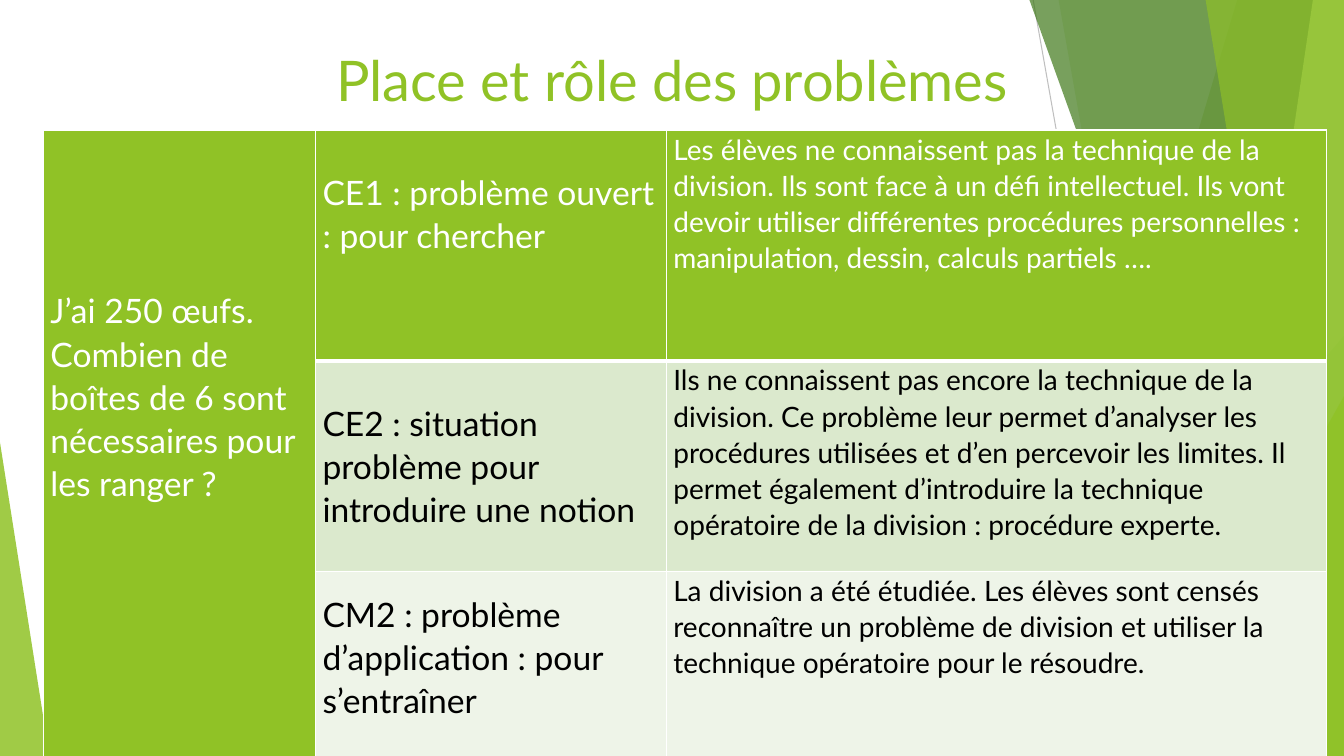
from dataclasses import dataclass

from lxml.etree import SubElement
from pptx import Presentation
from pptx.dml.color import RGBColor
from pptx.enum.shapes import MSO_CONNECTOR, MSO_SHAPE
from pptx.enum.text import MSO_ANCHOR, MSO_AUTO_SIZE, PP_ALIGN
from pptx.oxml.ns import qn
from pptx.shapes.autoshape import Shape
from pptx.slide import Slide
from pptx.table import _Cell as Cell
from pptx.util import Pt

FONT = "Lato"
WHITE = RGBColor(0xFF, 0xFF, 0xFF)
BLACK = RGBColor(0x00, 0x00, 0x00)
GREEN = RGBColor(0x90, 0xC2, 0x26)
MID_GREEN = RGBColor(0x54, 0xA0, 0x21)
DARK_GREEN = RGBColor(0x3F, 0x78, 0x19)
LIME = RGBColor(0xC0, 0xE4, 0x74)
PALE_GREEN = RGBColor(0xDB, 0xE9, 0xCD)
PALEST_GREEN = RGBColor(0xEE, 0xF4, 0xE8)
GREY = RGBColor(0xBF, 0xBF, 0xBF)
LIGHT_GREY = RGBColor(0xD9, 0xD9, 0xD9)

SLIDE_W, SLIDE_H = 960, 540
BAND_TOP = -0.6
LINE_SPACING = 1.07
BLANK_LINE = 14.1  # height of one 11 pt line at the table's line spacing


@dataclass(frozen=True)
class Ray:
    start: tuple[float, float]
    end: tuple[float, float]
    color: RGBColor


@dataclass(frozen=True)
class Band:
    """A facet that reaches from a slanted left edge to the right of the slide."""
    top_x: float
    bottom_x: float
    color: RGBColor
    opacity: int


@dataclass(frozen=True)
class Corner:
    """A right-angled triangle standing on the bottom of the slide."""
    left: float
    top: float
    width: float
    apex: float
    color: RGBColor
    opacity: int


@dataclass(frozen=True)
class Level:
    height: float
    purpose: str
    lines_above: int
    explanation: str
    fill: RGBColor
    color: RGBColor


DECOR = (
    Ray((738, 0), (833.8, 540), GREY),
    Ray((960, 290.2), (584.6, 540), LIGHT_GREY),
    Band(884.2, 722.9, GREEN, 30),
    Band(756, 851.8, GREEN, 20),
    Corner(703.4, 239.8, 256.6, 1, MID_GREEN, 72),
    Band(735.1, 929.5, DARK_GREEN, 70),
    Band(938.2, 858.2, LIME, 70),
    Band(861.1, 949, GREEN, 65),
    Corner(816.5, 283, 143.5, 1, GREEN, 80),
    Corner(0, 316.1, 35.3, 0, GREEN, 85),
)

PROBLEM = "J’ai 250 œufs. Combien de boîtes de 6 sont nécessaires pour les ranger ?"
COLUMN_WIDTHS = (194.4, 250.6, 471.6)
LEVELS = (
    Level(164.9, "CE1 : problème ouvert : pour chercher", 2,
          "Les élèves ne connaissent pas la technique de la division. Ils sont face à "
          "un défi intellectuel. Ils vont devoir utiliser différentes procédures "
          "personnelles : manipulation, dessin, calculs partiels ….",
          GREEN, WHITE),
    Level(150.5, "CE2 : situation problème pour introduire une notion", 2,
          "Ils ne connaissent pas encore la technique de la division. Ce problème leur "
          "permet d’analyser les procédures utilisées et d’en percevoir les limites. Il "
          "permet également d’introduire la technique opératoire de la division : "
          "procédure experte.",
          PALE_GREEN, BLACK),
    Level(132, "CM2 : problème d’application : pour s’entraîner", 1,
          "La division a été étudiée. Les élèves sont censés reconnaître un problème de "
          "division et utiliser la technique opératoire pour le résoudre.",
          PALEST_GREEN, BLACK),
)


def paint(facet: Shape, color: RGBColor, opacity: int) -> None:
    facet.shadow.inherit = False
    facet.line.fill.background()
    facet.fill.solid()
    facet.fill.fore_color.rgb = color
    tint = facet.element.spPr.find(f"{qn('a:solidFill')}/{qn('a:srgbClr')}")
    SubElement(tint, qn("a:alpha"), val=str(opacity * 1000))


def draw_ray(slide: Slide, ray: Ray) -> None:
    ends = [Pt(v) for v in (*ray.start, *ray.end)]
    line = slide.shapes.add_connector(MSO_CONNECTOR.STRAIGHT, *ends)
    line.line.color.rgb = ray.color
    line.line.width = Pt(0.75)
    SubElement(line.element.spPr, qn("a:effectLst"))


def draw_band(slide: Slide, band: Band) -> None:
    outline = slide.shapes.build_freeform(band.top_x, BAND_TOP, scale=Pt(1))
    outline.add_line_segments(
        [(SLIDE_W, BAND_TOP), (SLIDE_W, SLIDE_H), (band.bottom_x, SLIDE_H)])
    paint(outline.convert_to_shape(), band.color, band.opacity)


def draw_corner(slide: Slide, corner: Corner) -> None:
    triangle = slide.shapes.add_shape(
        MSO_SHAPE.ISOSCELES_TRIANGLE, Pt(corner.left), Pt(corner.top),
        Pt(corner.width), Pt(SLIDE_H - corner.top))
    triangle.adjustments[0] = corner.apex
    paint(triangle, corner.color, corner.opacity)


def draw_decor(slide: Slide) -> None:
    painters = {Ray: draw_ray, Band: draw_band, Corner: draw_corner}
    for part in DECOR:
        painters[type(part)](slide, part)


def style_cell(cell: Cell, fill: RGBColor, bottom_width: float) -> None:
    """Set margins, white borders and fill."""
    cell.margin_left = cell.margin_right = Pt(5)
    cell.margin_top = cell.margin_bottom = 0
    properties = cell._tc.get_or_add_tcPr()
    for side, width in (("L", 1), ("R", 1), ("T", 1), ("B", bottom_width)):
        border = SubElement(properties, qn(f"a:ln{side}"), w=str(Pt(width)))
        SubElement(SubElement(border, qn("a:solidFill")), qn("a:srgbClr"), val=str(WHITE))
    cell.fill.solid()
    cell.fill.fore_color.rgb = fill


def write_cell(cell: Cell, text: str, size: float, color: RGBColor,
               lines_above: int = 0) -> None:
    cell.margin_top = Pt(lines_above * BLANK_LINE)
    cell.text = text
    paragraph = cell.text_frame.paragraphs[0]
    paragraph.line_spacing = LINE_SPACING
    font = paragraph.font
    font.name, font.size, font.bold = FONT, Pt(size), False
    font.color.rgb = color


def draw_levels(slide: Slide) -> None:
    frame = slide.shapes.add_table(
        len(LEVELS), len(COLUMN_WIDTHS), Pt(31), Pt(92.9),
        Pt(sum(COLUMN_WIDTHS)), Pt(sum(level.height for level in LEVELS)))
    frame.element.addprevious(slide.shapes.title.element)
    table = frame.table
    for column, width in zip(table.columns, COLUMN_WIDTHS):
        column.width = Pt(width)
    for row, level in enumerate(LEVELS):
        table.rows[row].height = Pt(level.height)
        for col in range(len(COLUMN_WIDTHS)):
            style_cell(table.cell(row, col), GREEN if col == 0 else level.fill,
                       3 if row == 0 else 1)
        write_cell(table.cell(row, 1), level.purpose, 24, level.color, level.lines_above)
        write_cell(table.cell(row, 2), level.explanation, 20, level.color)
    problem = table.cell(0, 0)
    problem.merge(table.cell(len(LEVELS) - 1, 0))
    write_cell(problem, PROBLEM, 24, WHITE, 8)


def write_title(slide: Slide) -> None:
    title = slide.shapes.title
    title.left, title.top, title.width, title.height = Pt(66), Pt(29), Pt(828), Pt(26)
    title.text = "Place et rôle des problèmes"
    text_frame = title.text_frame
    text_frame.word_wrap = True
    text_frame.auto_size = MSO_AUTO_SIZE.NONE
    text_frame.vertical_anchor = MSO_ANCHOR.TOP
    heading = text_frame.paragraphs[0]
    heading.alignment = PP_ALIGN.CENTER
    heading.font.name, heading.font.size = FONT, Pt(40)
    heading.font.color.rgb = GREEN


def main() -> None:
    presentation = Presentation()
    presentation.slide_width, presentation.slide_height = Pt(SLIDE_W), Pt(SLIDE_H)
    slide = presentation.slides.add_slide(presentation.slide_layouts[5])
    write_title(slide)
    draw_decor(slide)
    draw_levels(slide)
    presentation.save("out.pptx")


if __name__ == "__main__":
    main()
